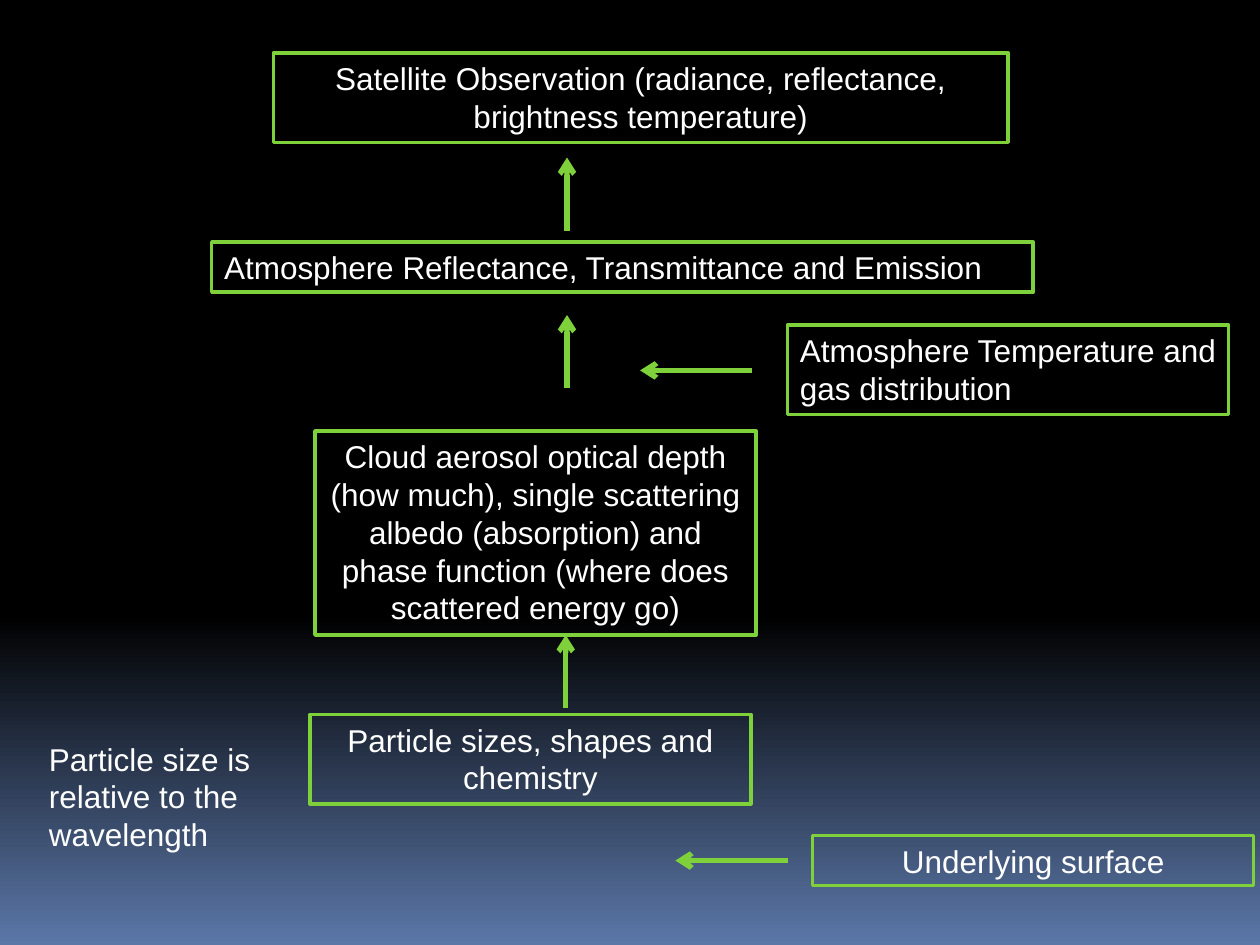
from copy import deepcopy

from lxml import etree
from pptx import Presentation, util as u
from pptx.dml.color import RGBColor
from pptx.enum import shapes, text
from pptx.oxml.ns import qn

HUES = {"line": "7FD13B", "text": "FFFFFF", "sky": "000000", "ground": "5B77A8"}
WIDE, ROW = 3.5, 0.71  # side box width, height of a two-line box
MID, SPAN, RISE = 4.5, 0.89, 0.58  # arrow axis, side arrow and up arrow lengths

LEFT, CENTER = text.PP_ALIGN.LEFT, text.PP_ALIGN.CENTER
BOXES = [
    ("Satellite Observation (radiance, reflectance, brightness temperature)",
     (2.17, 0.42, 5.83, ROW), CENTER),
    ("Atmosphere Reflectance, Transmittance and Emission",
     (1.68, 1.92, 6.52, 0.4), LEFT),
    ("Atmosphere Temperature and gas distribution",
     (6.25, 2.58, WIDE, ROW), LEFT),
    ("Cloud aerosol optical depth (how much), single scattering albedo "
     "(absorption) and phase function (where does scattered energy go)",
     (2.5, 3.42, WIDE, 1.62), CENTER),
    ("Particle sizes, shapes and chemistry", (2.46, 5.67, WIDE, ROW), CENTER),
    ("Underlying surface", (6.45, 6.63, WIDE, 0.4), CENTER),
]
NOTE = ("Particle size is relative to the wavelength", (0.29, 5.82, 1.88, 1.01))
UP = [(MID, 1.83), (MID, 3.08), (4.49, 5.62)]
SIDE = [(5.97, 2.94), (6.25, 6.83)]


def hue(name):
    return RGBColor.from_string(HUES[name])


def shade(slide):
    """Fade the background from sky down to ground."""
    fill = slide.background.fill
    fill.gradient()
    fill.gradient_angle = 270
    first = slide.background._cSld.find(".//" + qn("a:gs"))
    first.addnext(deepcopy(first))
    stops = [(0, "sky"), (0.65, "sky"), (1, "ground")]
    for stop, (pos, name) in zip(fill.gradient_stops, stops):
        stop.position = pos
        stop.color.rgb = hue(name)


def label(slide, words, place, align=LEFT):
    box = slide.shapes.add_textbox(*map(u.Inches, place))
    frame = box.text_frame
    frame.word_wrap = True
    frame.auto_size = text.MSO_AUTO_SIZE.SHAPE_TO_FIT_TEXT
    para = frame.paragraphs[0]
    para.text = words
    para.alignment = align
    para.font.name = "Arial"
    para.font.size = u.Pt(18)
    para.font.color.rgb = hue("text")
    return box


def frame(slide, words, place, align):
    """Add a label with an outline."""
    line = label(slide, words, place, align).line
    line.color.rgb = hue("line")
    line.width = u.Pt(2)


def arrow(slide, x, y, dx=0, dy=0):
    ends = map(u.Inches, (x, y, x + dx, y + dy))
    link = slide.shapes.add_connector(shapes.MSO_CONNECTOR.STRAIGHT, *ends)
    link.line.color.rgb = hue("line")
    link.line.width = u.Pt(3)
    props = link._element.spPr
    etree.SubElement(props.find(qn("a:ln")), qn("a:tailEnd"), type="arrow")
    etree.SubElement(props, qn("a:effectLst"))


def main():
    deck = Presentation()
    deck.slide_width, deck.slide_height = u.Inches(10), u.Inches(7.5)
    slide = deck.slides.add_slide(deck.slide_layouts[6])
    shade(slide)
    for box in BOXES:
        frame(slide, *box)
    for x, y in UP:
        arrow(slide, x, y, dy=-RISE)
    for x, y in SIDE:
        arrow(slide, x, y, dx=-SPAN)
    label(slide, *NOTE)
    deck.save("out.pptx")


if __name__ == "__main__":
    main()
